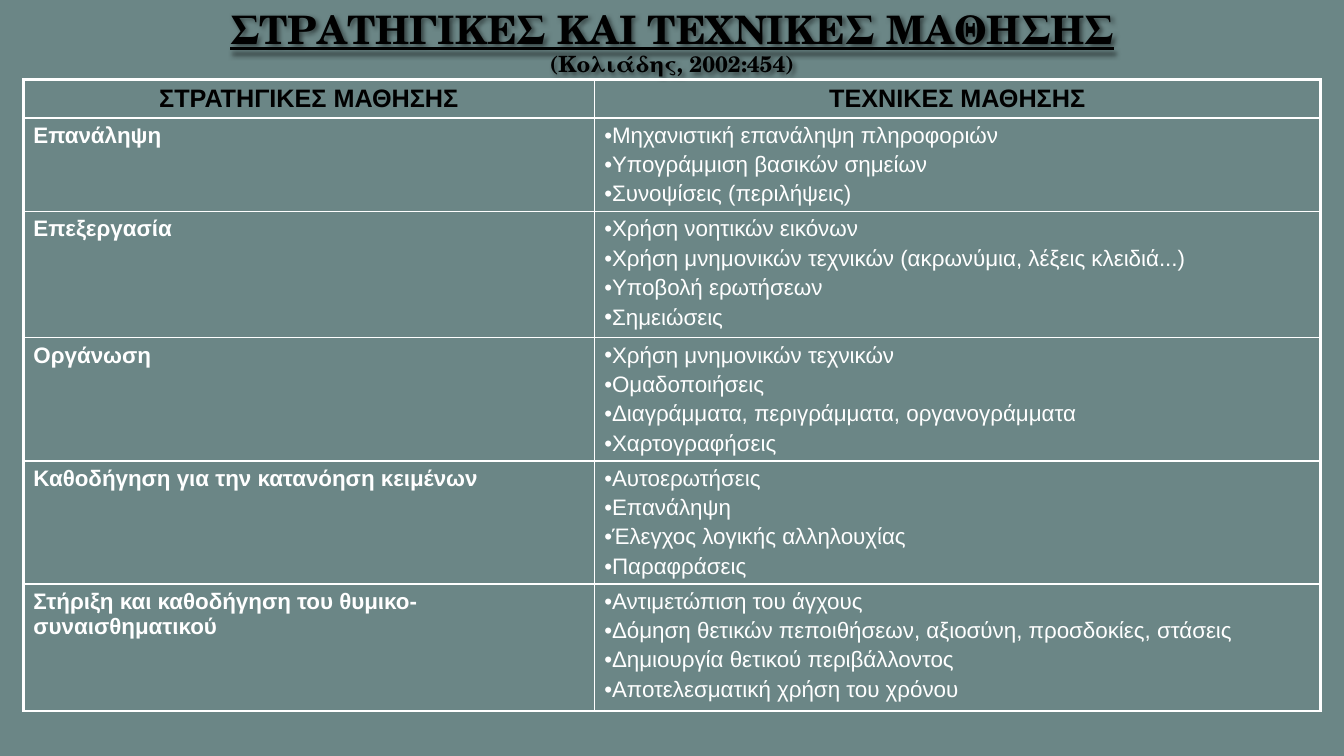
from copy import deepcopy
from lxml.etree import SubElement, fromstring
from pptx import Presentation
from pptx.dml.color import RGBColor
from pptx.enum.text import MSO_ANCHOR as Anchor, MSO_AUTO_SIZE as Fit, PP_ALIGN as Align
from pptx.oxml.ns import nsdecls, qn
from pptx.util import Inches, Pt

BACK = RGBColor(0x6B, 0x86, 0x86)
BLACK = RGBColor(0, 0, 0)
WHITE = RGBColor(255, 255, 255)
EDGE = RGBColor(0x40, 0x40, 0x40)
WIDE, HIGH = Inches(13.33), Inches(7.5)

HEADS = ["ΣΤΡΑΤΗΓΙΚΕΣ ΜΑΘΗΣΗΣ", "ΤΕΧΝΙΚΕΣ ΜΑΘΗΣΗΣ"]
ROWS = [
    ("Επανάληψη", [
        "Μηχανιστική επανάληψη πληροφοριών",
        "Υπογράμμιση βασικών σημείων",
        "Συνοψίσεις (περιλήψεις)"]),
    ("Επεξεργασία", [
        "Χρήση νοητικών εικόνων",
        "Χρήση μνημονικών τεχνικών (ακρωνύμια, λέξεις κλειδιά...)",
        "Υποβολή ερωτήσεων",
        "Σημειώσεις"]),
    ("Οργάνωση", [
        "Χρήση μνημονικών τεχνικών",
        "Ομαδοποιήσεις",
        "Διαγράμματα, περιγράμματα, οργανογράμματα",
        "Χαρτογραφήσεις"]),
    ("Καθοδήγηση για την κατανόηση κειμένων", [
        "Αυτοερωτήσεις",
        "Επανάληψη",
        "Έλεγχος λογικής αλληλουχίας",
        "Παραφράσεις"]),
    ("Στήριξη και καθοδήγηση του θυμικο-συναισθηματικού", [
        "Αντιμετώπιση του άγχους",
        "Δόμηση θετικών πεποιθήσεων, αξιοσύνη, προσδοκίες, στάσεις",
        "Δημιουργία θετικού περιβάλλοντος",
        "Αποτελεσματική χρήση του χρόνου"]),
]
COLS = [5.66, 7.2]
TALL = [0.37, 0.93, 1.25, 1.22, 1.22, 1.26]


def place(left, top, width, height):
    return (int(WIDE * left / 100), int(HIGH * top / 100),
            int(WIDE * width / 100), int(HIGH * height / 100))


def style(run, face, size, color, bold):
    font = run.font
    font.name, font.size, font.bold = face, Pt(size), bold
    font.color.rgb = color


def draw_title(slide, box):
    title = slide.shapes.title
    title.left, title.top, title.width, title.height = box
    frame = title.text_frame
    frame.auto_size, frame.word_wrap = Fit.NONE, True
    frame.vertical_anchor = Anchor.MIDDLE
    frame.margin_left = frame.margin_right = 0
    frame.margin_top = frame.margin_bottom = 0
    para = frame.paragraphs[0]
    para.text = "ΣΤΡΑΤΗΓΙΚΕΣ ΚΑΙ ΤΕΧΝΙΚΕΣ ΜΑΘΗΣΗΣ\v(Κολιάδης, 2002:454)"
    para.alignment, para.line_spacing = Align.CENTER, 0.9
    for run, size, under in zip(para.runs, (28, 16), (True, False)):
        style(run, "TeX Gyre Schola", size, BLACK, True)
        run.font.underline = under
        run.font._element.insert(0, fromstring(
            f'<a:ln {nsdecls("a")} w="{Pt(0.75)}"><a:solidFill><a:srgbClr val="{EDGE}">'
            '<a:alpha val="10000"/></a:srgbClr></a:solidFill></a:ln>'))
    gap = para._p.find(qn("a:br"))
    gap.insert(0, deepcopy(para.runs[0].font._element))
    title._element.spPr.append(fromstring(
        f'<a:effectLst {nsdecls("a")}><a:outerShdw blurRad="{Pt(3)}" dist="{Pt(2)}" '
        f'dir="2700000"><a:srgbClr val="{BLACK}"><a:alpha val="50000"/></a:srgbClr>'
        '</a:outerShdw></a:effectLst>'))


def add_edges(cell, row, col):
    outer = {"L": col == 0, "R": col == len(COLS) - 1,
             "T": row == 0, "B": row == len(TALL) - 1}
    props = cell._tc.get_or_add_tcPr()
    for side, thick in outer.items():
        line = SubElement(props, qn(f"a:ln{side}"), w=str(Pt(2.25 if thick else 1)))
        fill = SubElement(line, qn("a:solidFill"))
        SubElement(fill, qn("a:srgbClr"), val=str(WHITE))


def fill_cell(cell, lines, head, listed):
    cell.text_frame.text = "\n".join(lines)
    for para in cell.text_frame.paragraphs:
        para.alignment = Align.CENTER if head else Align.LEFT
        props = para._p.get_or_add_pPr()
        before = SubElement(props, qn("a:spcBef"))
        SubElement(before, qn("a:spcPct"), val="20000")
        if listed:
            SubElement(props, qn("a:buFont"), typeface="Arial")
            SubElement(props, qn("a:buChar"), char="•")
        style(para.runs[0], "Arial", 18 if head else 16,
              BLACK if head else WHITE, not listed)


def draw_table(slide, box):
    table = slide.shapes.add_table(len(TALL), len(COLS), *box).table
    table.first_row = table.horz_banding = False
    for col, share in zip(table.columns, COLS):
        col.width = int(box[2] * share / sum(COLS))
    for row, share in zip(table.rows, TALL):
        row.height = int(box[3] * share / sum(TALL))
    grid = [[[head] for head in HEADS]] + [[[name], items] for name, items in ROWS]
    for r, row in enumerate(grid):
        for c, lines in enumerate(row):
            cell = table.cell(r, c)
            add_edges(cell, r, c)
            cell.fill.background()
            fill_cell(cell, lines, r == 0, r > 0 and c == 1)


def main():
    deck = Presentation()
    deck.slide_width, deck.slide_height = WIDE, HIGH
    slide = deck.slides.add_slide(deck.slide_layouts[5])
    back = slide.background.fill
    back.solid()
    back.fore_color.rgb = BACK
    draw_title(slide, place(16.25, 1.73, 67.5, 8.13))
    draw_table(slide, place(1.74, 10.53, 96.5, 83.4))
    deck.save("out.pptx")


if __name__ == "__main__":
    main()
